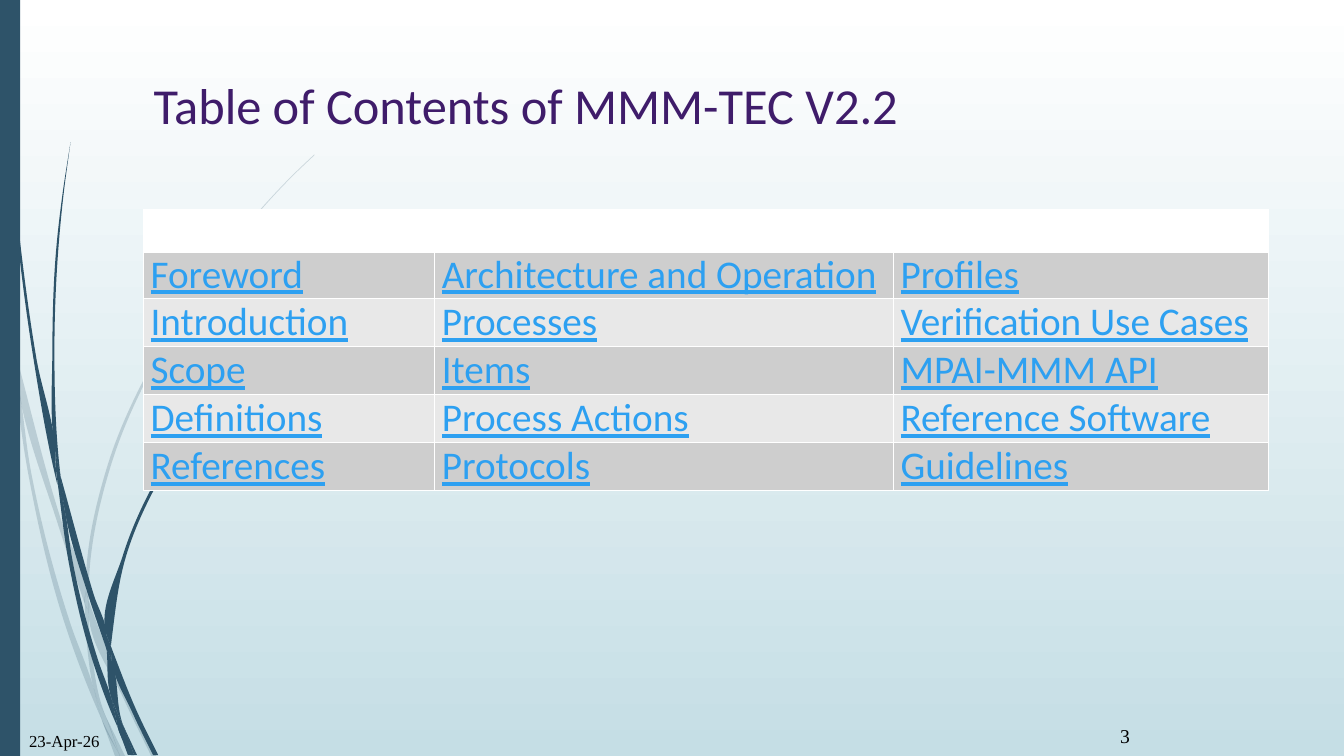
from dataclasses import dataclass
from math import dist

from lxml.etree import SubElement
from pptx import Presentation
from pptx.dml.color import RGBColor
from pptx.enum.shapes import MSO_SHAPE
from pptx.oxml.ns import qn
from pptx.slide import Slide
from pptx.table import _Cell as Cell
from pptx.util import Pt

Point = tuple[float, float]

TEAL, WHITE, BLACK = "2E5369", "FFFFFF", "000000"
PURPLE, LINK_BLUE = "3F1C6A", "2DA0F1"
BAND_FILLS = ("CECECE", "E8E8E8")


@dataclass(frozen=True)
class Label:
    text: str
    left: float
    top: float
    width: float
    height: float
    size: float
    font: str
    color: str


# Anchor points of the grass pieces; the curves between them are worked out.
PALE_GRASS: list[list[Point]] = [
    [(7.9, 252), (6.5, 231.8), (0, 203), (0, 215.3), (7.2, 247.7)],
    [(41.8, 375.8), (60.5, 431.3), (61.2, 421.9), (44.6, 374.4), (10.1, 248.4), (12.2, 270.7)],
    [(66.2, 437), (63.4, 429.1), (63.4, 439.2), (88.6, 499.7), (108, 540), (111.6, 540),
     (91.4, 498.2)],
    [(85.7, 540), (89.3, 540), (75.6, 511.9)],
    [(67, 491.8), (50.4, 445.7), (22.3, 337.7), (12.2, 270.7), (7.9, 252), (20.2, 338.4),
     (46.8, 447.1), (66.2, 499), (72.7, 514.1), (71.3, 509)],
    [(60.5, 431.3), (62.6, 465.1), (67, 491.8), (69.1, 498.2), (75.6, 511.9), (74.2, 508.3),
     (65.5, 465.1), (63.4, 439.2), (63.4, 437.8)],
    [(63.4, 420.5), (79.2, 332.6), (115.2, 251.3), (164.9, 176.4), (193, 142.6), (208.8, 126),
     (224.6, 110.9), (224.6, 110.2), (208.1, 126), (193, 141.8), (164.2, 175.7),
     (113.8, 250.6), (77, 331.9), (61.2, 420.5), (61.2, 421.9), (63.4, 429.1)],
    [(72.7, 514.1), (82.1, 540), (85.7, 540)],
    [(63.4, 437.8), (63.4, 439.2), (63.4, 429.1), (61.2, 421.9), (60.5, 431.3)],
    [(69.1, 498.2), (67, 491.8), (71.3, 509), (72.7, 514.1), (85.7, 540), (75.6, 511.9)],
]
DARK_GRASS: list[list[Point]] = [
    [(5, 79.2), (12.2, 167.8), (23.8, 255.6), (40.3, 343.4), (41, 346.3), (39.6, 329),
     (39.6, 326.2), (25.9, 255.6), (13.7, 167), (5.8, 78.5), (3.6, 34.6), (2.9, 0),
     (2.2, 0), (2.9, 34.6)],
    [(63.4, 426.2), (76.3, 464.4), (76.3, 455.8), (76.3, 454.3), (67, 424.8), (43.2, 339.8),
     (46.1, 363.6)],
    [(81.4, 467.3), (79.2, 461.5), (79.9, 472.3), (95, 509.8), (109.4, 539.3), (113, 539.3),
     (97.9, 508.3)],
    [(79.2, 497.5), (70.6, 473), (51.8, 400.3), (46.1, 363.6), (41, 343.4), (49, 401),
     (67, 474.5), (79.9, 509.8), (84.2, 519.8), (83.5, 516.2)],
    [(43.2, 339.8), (41.8, 326.2), (38.9, 251.3), (41.8, 176.4), (45.4, 139), (50.4, 101.5),
     (44.6, 139), (40.3, 176.4), (37.4, 251.3), (39.6, 323.3)],
    [(95.8, 539.3), (97.9, 539.3), (87.8, 517.7)],
    [(41, 343.4), (46.1, 363.6), (43.2, 339.8), (39.6, 323.3), (39.6, 326.2)],
    [(79.9, 455.8), (90, 397.4), (113.8, 342.7), (147.6, 292.3), (166.3, 269.3),
     (176.4, 258.5), (187.9, 247.7), (187.2, 247.7), (176.4, 257.8), (166.3, 268.6),
     (146.9, 291.6), (112.3, 341.3), (87.8, 396.7), (76.3, 454.3), (79.2, 461.5)],
    [(84.2, 519.8), (91.4, 539.3), (94.3, 539.3)],
    [(76.3, 464.4), (79.2, 497.5), (83.5, 508.3), (87.8, 517.7), (87.1, 515.5),
     (79.9, 472.3), (78.5, 468.7)],
    [(76.3, 464.4), (78.5, 468.7), (79.9, 472.3), (79.2, 461.5), (76.3, 454.3), (76.3, 455.8)],
    [(83.5, 508.3), (79.2, 497.5), (83.5, 516.2), (84.2, 519.8), (93.6, 539.3),
     (95.8, 539.3), (87.8, 517.7)],
]

LABELS = [
    Label("Table of Contents of MMM-TEC V2.2", 102.6, 49.5, 803.5, 100, 36, "Calibri", PURPLE),
    Label("23-Apr-26", 13.7, 518.4, 78.5, 21, 12, "Times New Roman", BLACK),
    Label("3", 793, 513.8, 44, 24, 14, "Times New Roman", BLACK),
]

CONTENTS = [
    ("Foreword", "Architecture and Operation", "Profiles"),
    ("Introduction", "Processes", "Verification Use Cases"),
    ("Scope", "Items", "MPAI-MMM API"),
    ("Definitions", "Process Actions", "Reference Software"),
    ("References", "Protocols", "Guidelines"),
]
COLUMN_WIDTHS = (208, 327.7, 267.8)
HEADER_HEIGHT, ROW_HEIGHT = 29.5, 34.1


def rgb(color: str) -> RGBColor:
    return RGBColor.from_string(color)


def unit(start: Point, end: Point) -> Point:
    length = dist(start, end)
    return (end[0] - start[0]) / length, (end[1] - start[1]) / length


def handles(before: Point, anchor: Point, after: Point) -> tuple[Point, Point]:
    """Control points on both sides of an anchor; sharp turns stay corners."""
    back, ahead = dist(before, anchor) / 3, dist(anchor, after) / 3
    came, goes = unit(before, anchor), unit(anchor, after)
    if came[0] * goes[0] + came[1] * goes[1] > 0.8:
        blend = (came[0] * ahead + goes[0] * back, came[1] * ahead + goes[1] * back)
        came = goes = unit((0, 0), blend)
    return ((anchor[0] - came[0] * back, anchor[1] - came[1] * back),
            (anchor[0] + goes[0] * ahead, anchor[1] + goes[1] * ahead))


def draw_grass(slide: Slide, anchors: list[Point], opacity: int) -> None:
    following = anchors[1:] + anchors[:1]
    preceding = anchors[-1:] + anchors[:-1]
    arms = [handles(*trio) for trio in zip(preceding, anchors, following)]
    curve = []
    for (_, leaving), (arriving, _), anchor in zip(arms, arms[1:] + arms[:1], following):
        curve += [leaving, arriving, anchor]
    builder = slide.shapes.build_freeform(Pt(anchors[0][0]), Pt(anchors[0][1]))
    builder.add_line_segments([(Pt(x), Pt(y)) for x, y in curve], close=True)
    shape = builder.convert_to_shape()
    # Each three line ends become the control points and end of one curve
    lines = list(shape._element.iter(qn("a:lnTo")))
    for first, second, third in zip(lines[::3], lines[1::3], lines[2::3]):
        first.tag = qn("a:cubicBezTo")
        for line in (second, third):
            first.append(line[0])
            line.getparent().remove(line)
    paint(shape)
    if opacity < 100:
        color = shape.fill._xPr.find(qn("a:solidFill"))[0]
        SubElement(color, qn("a:alpha"), val=str(opacity * 1000))


def paint(shape) -> None:
    """Give a decoration its flat teal look."""
    shape.shadow.inherit = False
    shape.fill.solid()
    shape.fill.fore_color.rgb = rgb(TEAL)
    shape.line.fill.background()


def draw_label(slide: Slide, label: Label) -> None:
    frame = slide.shapes.add_textbox(
        Pt(label.left), Pt(label.top), Pt(label.width), Pt(label.height)).text_frame
    frame.word_wrap = True
    frame.text = label.text
    font = frame.paragraphs[0].font
    font.size, font.name = Pt(label.size), label.font
    font.color.rgb = rgb(label.color)


def style_cell(cell: Cell, fill: str, top: float = 1, bottom: float = 1) -> None:
    cell.margin_left = cell.margin_right = Pt(5)
    cell.margin_top = cell.margin_bottom = 0
    for side, width in (("L", 1), ("R", 1), ("T", top), ("B", bottom)):
        border = SubElement(cell._tc.get_or_add_tcPr(), qn(f"a:ln{side}"), w=str(Pt(width)))
        SubElement(SubElement(border, qn("a:solidFill")), qn("a:srgbClr"), val=WHITE)
    cell.fill.solid()
    cell.fill.fore_color.rgb = rgb(fill)


def draw_contents(slide: Slide) -> None:
    height = HEADER_HEIGHT + ROW_HEIGHT * len(CONTENTS)
    table = slide.shapes.add_table(
        len(CONTENTS) + 1, len(COLUMN_WIDTHS),
        Pt(102.6), Pt(149.6), Pt(sum(COLUMN_WIDTHS)), Pt(height)).table
    for column, width in zip(table.columns, COLUMN_WIDTHS):
        column.width = Pt(width)
    header, *body = table.rows
    header.height = Pt(HEADER_HEIGHT)
    for cell in header.cells:
        style_cell(cell, WHITE, bottom=3)
    for index, (row, entries) in enumerate(zip(body, CONTENTS)):
        row.height = Pt(ROW_HEIGHT)
        for cell, entry in zip(row.cells, entries):
            style_cell(cell, BAND_FILLS[index % 2], top=1 if index else 3)
            cell.text = entry
            font = cell.text_frame.paragraphs[0].font
            font.size, font.name, font.underline = Pt(28), "Calibri", True
            font.color.rgb = rgb(LINK_BLUE)


def main() -> None:
    deck = Presentation()
    deck.slide_width, deck.slide_height = Pt(960), Pt(540)
    slide = deck.slides.add_slide(deck.slide_layouts[6])
    backdrop = slide.background.fill
    backdrop.gradient()
    backdrop.gradient_angle = 270
    for stop, color in zip(backdrop.gradient_stops, (WHITE, "C5DEE5")):
        stop.color.rgb = rgb(color)
    for pieces, opacity in ((PALE_GRASS, 20), (DARK_GRASS, 100)):
        for anchors in pieces:
            draw_grass(slide, anchors, opacity)
    paint(slide.shapes.add_shape(MSO_SHAPE.RECTANGLE, 0, 0, Pt(14.4), Pt(540)))
    draw_contents(slide)
    for label in LABELS:
        draw_label(slide, label)
    deck.save("out.pptx")


if __name__ == "__main__":
    main()
